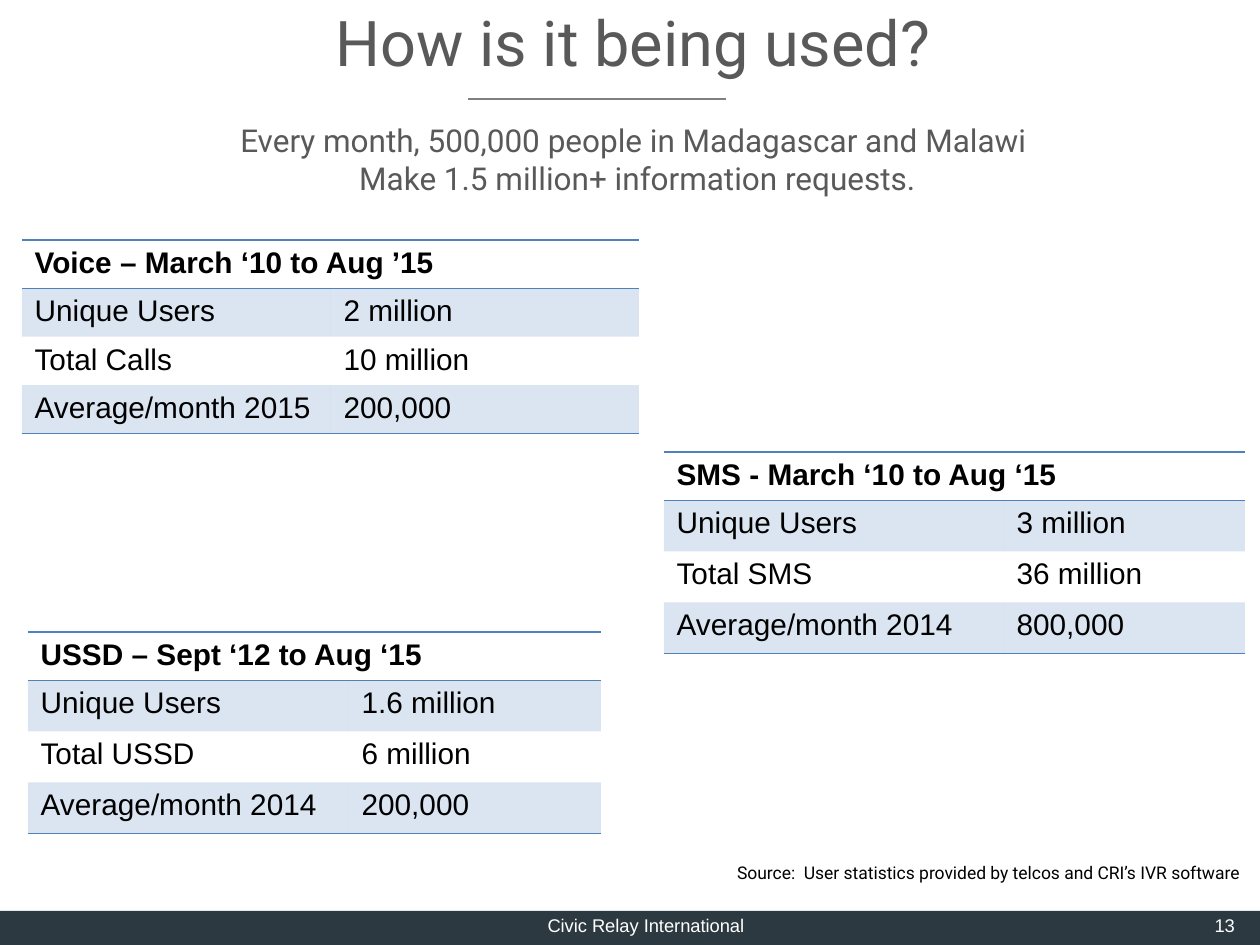
import pptx
import pptx.dml.color
import pptx.enum.shapes
import pptx.enum.text
import pptx.oxml
import pptx.oxml.ns
import pptx.util

RGBColor = pptx.dml.color.RGBColor
ALIGN = pptx.enum.text.PP_ALIGN
GREY = RGBColor(0x59, 0x59, 0x59)
RULE_GREY = RGBColor(0x80, 0x80, 0x80)
SLATE = RGBColor(0x2D, 0x39, 0x40)
BLUE = RGBColor(0x4F, 0x81, 0xBD)
BLACK = RGBColor(0, 0, 0)
WHITE = RGBColor(0xFF, 0xFF, 0xFF)

PX = 914400 // 126
NS = pptx.oxml.ns.nsdecls("a")
NO_STYLE = "{2D5ABB26-0587-4C30-8999-92F81FD0307C}"


def add_run(paragraph, text, size, font, color, bold=False):
    run = paragraph.add_run()
    run.text = text
    run.font.size = pptx.util.Pt(size)
    run.font.name = font
    run.font.color.rgb = color
    run.font.bold = bold


def add_text(box, lines, size, font, color, align, side=13):
    left, top, width, height = (v * PX for v in box)
    frame = slide.shapes.add_textbox(left, top, width, height).text_frame
    frame.word_wrap = True
    frame.margin_left = frame.margin_right = side * PX
    for i, line in enumerate(lines):
        paragraph = frame.add_paragraph() if i else frame.paragraphs[0]
        paragraph.alignment = align
        add_run(paragraph, line, size, font, color)


prs = pptx.Presentation()
prs.slide_width = 1260 * PX
prs.slide_height = 945 * PX
slide = prs.slides.add_slide(prs.slide_layouts[5])

# Footer bar with organisation and page number
footer_bar = slide.shapes.add_shape(
    pptx.enum.shapes.MSO_SHAPE.RECTANGLE, 0, 911 * PX, 1260 * PX, 34 * PX)
footer_bar.shadow.inherit = False
footer_bar.fill.solid()
footer_bar.fill.fore_color.rgb = SLATE
footer_bar.line.fill.background()
add_text((1144, 908, 91, 36), ["13"], 10.5, "Arial", WHITE, ALIGN.RIGHT, 0)
add_text((315, 908, 662, 36), ["Civic Relay International"], 10.5, "Arial", WHITE,
         ALIGN.CENTER, 0)

# Title and the rule below it
title = slide.shapes.title
title.left, title.top, title.width, title.height = 0, 14 * PX, 1266 * PX, 54 * PX
title_frame = title.text_frame
title_frame.margin_left = title_frame.margin_right = 0
title_frame.vertical_anchor = pptx.enum.text.MSO_ANCHOR.MIDDLE
title_frame.auto_size = pptx.enum.text.MSO_AUTO_SIZE.NONE
title_frame.paragraphs[0].alignment = ALIGN.CENTER
add_run(title_frame.paragraphs[0], "How is it being used?", 36, "Roboto", GREY)

title_rule = slide.shapes.add_connector(
    pptx.enum.shapes.MSO_CONNECTOR.STRAIGHT, 468 * PX, 99 * PX, 726 * PX, 99 * PX)
title_rule.line.color.rgb = RULE_GREY
title_rule.line.width = pptx.util.Pt(0.75)
title_rule._element.spPr.append(pptx.oxml.parse_xml(f"<a:effectLst {NS}/>"))

# Summary and source
add_text((0, 115, 1275, 89),
         ["Every month, 500,000 people in Madagascar and Malawi ",
          "Make 1.5 million+ information requests."],
         18, "Roboto", GREY, ALIGN.CENTER)
add_text((724, 856, 536, 34),
         ["Source:  User statistics provided by telcos and CRI’s IVR software"],
         10, "Roboto", BLACK, ALIGN.LEFT)

# Usage tables: left, top, column widths, body row height, heading, body
usage_tables = [
    (22, 240, (309, 308), 46, "Voice – March ‘10 to Aug ’15",
     [("Unique Users", "2 million"), ("Total Calls", "10 million"),
      ("Average/month 2015", "200,000")]),
    (664, 452, (340, 241), 51, "SMS - March ‘10 to Aug ‘15",
     [("Unique Users", "3 million"), ("Total SMS", "36 million"),
      ("Average/month 2014", "800,000")]),
    (28, 632, (321, 252), 51, "USSD – Sept ‘12 to Aug ‘15",
     [("Unique Users", "1.6 million"), ("Total USSD", "6 million"),
      ("Average/month 2014", "200,000")]),
]
for left, top, widths, row_height, heading, body in usage_tables:
    rows = [(heading, "")] + body
    heights = [46] + [row_height] * len(body)
    frame = slide.shapes.add_table(len(rows), 2, left * PX, top * PX,
                                   sum(widths) * PX, sum(heights) * PX)
    table = frame.table
    table.first_row = table.horz_banding = False
    table._tbl.tblPr.find(pptx.oxml.ns.qn("a:tableStyleId")).text = NO_STYLE
    for column, width in zip(table.columns, widths):
        column.width = width * PX
    for row, height in zip(table.rows, heights):
        row.height = height * PX
    table.cell(0, 0).merge(table.cell(0, 1))

    for r, values in enumerate(rows):
        # Lines above and below the heading, and below the last row
        edges = {0: ("lnT", "lnB"), len(body): ("lnB",)}.get(r, ())
        for c, value in enumerate(values):
            cell = table.cell(r, c)
            properties = cell._tc.get_or_add_tcPr()
            for edge in edges:
                properties.append(pptx.oxml.parse_xml(
                    f'<a:{edge} {NS} w="12700"><a:solidFill><a:srgbClr val="{BLUE}"/>'
                    f'</a:solidFill></a:{edge}>'))
            if r % 2:
                cell.fill.solid()
                cell.fill.fore_color.rgb = BLUE
                tint = properties.find(pptx.oxml.ns.qn("a:solidFill"))
                tint[0].append(pptx.oxml.parse_xml(f'<a:alpha {NS} val="20000"/>'))
            else:
                cell.fill.background()
            paragraph = cell.text_frame.paragraphs[0]
            if value:
                add_run(paragraph, value, 17, "Arial", BLACK, r == 0)
            # The paragraph end also sets the row height
            paragraph._p.append(pptx.oxml.parse_xml(f'<a:endParaRPr {NS} sz="1700"/>'))

prs.save("out.pptx")
